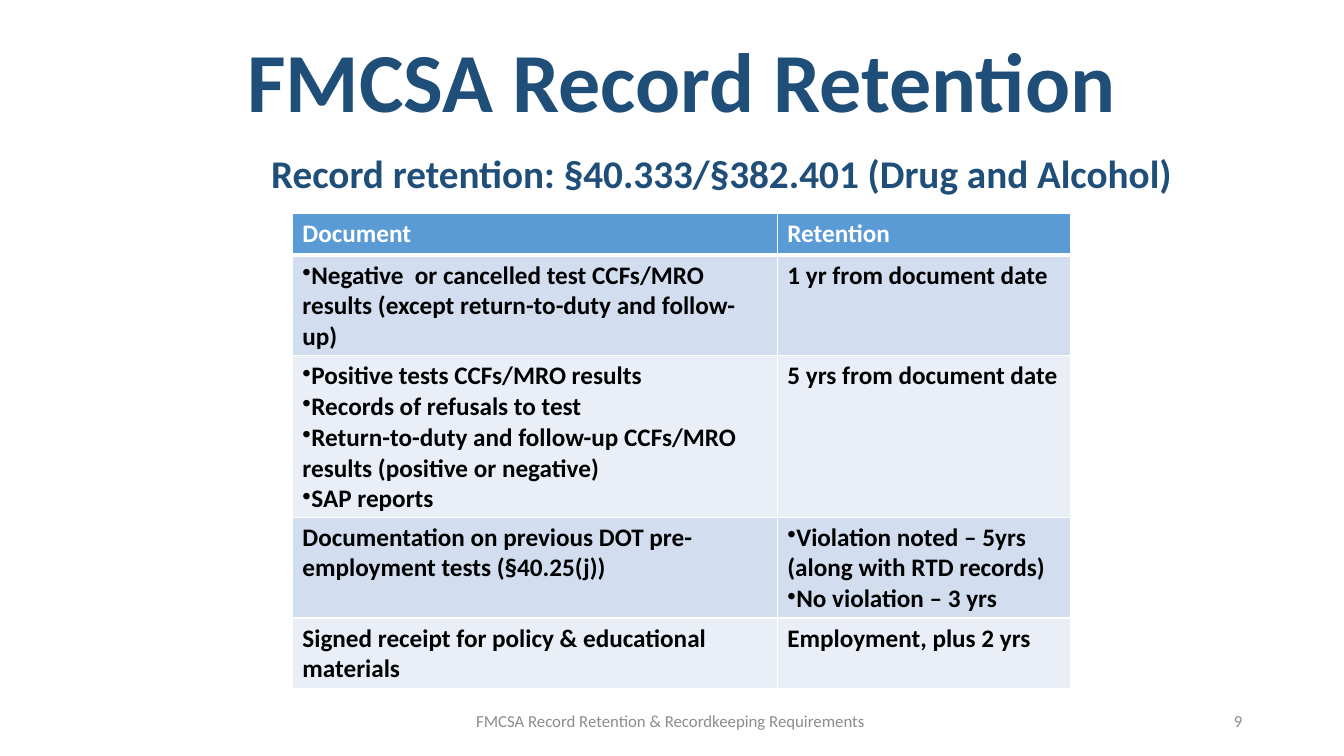
from lxml import etree
from pptx import Presentation
from pptx.dml.color import RGBColor
from pptx.enum.text import MSO_ANCHOR, PP_ALIGN
from pptx.oxml.ns import qn
from pptx.util import Inches, Pt

LEFT, CENTER, RIGHT = PP_ALIGN.LEFT, PP_ALIGN.CENTER, PP_ALIGN.RIGHT
TOP, MIDDLE, BOTTOM = MSO_ANCHOR.TOP, MSO_ANCHOR.MIDDLE, MSO_ANCHOR.BOTTOM
FONT = "Calibri"
BULLET = "•"
COLORS = {
    "navy": "1F4E79", "gray": "8C8C8C", "white": "FFFFFF", "black": "000000",
    "header": "5B9BD5", "band_dark": "D2DEEF", "band_light": "EAEFF7",
}

deck = Presentation()
deck.slide_width, deck.slide_height = Inches(13.33), Inches(7.5)
page = deck.slides.add_slide(deck.slide_layouts[6])


def add_span(para, text, size, color, bold):
    span = para.add_run()
    span.text = text
    span.font.name = FONT
    span.font.size = Pt(size)
    span.font.bold = bold
    span.font.color.rgb = RGBColor.from_string(COLORS[color])


def add_border(cell, side, width):
    line = etree.SubElement(cell._tc.get_or_add_tcPr(), qn(f"a:ln{side}"), w=str(Pt(width)))
    fill = etree.SubElement(line, qn("a:solidFill"))
    etree.SubElement(fill, qn("a:srgbClr"), val=COLORS["white"])


# Title, subtitle, footer and page number
captions = [
    ("FMCSA Record Retention", (1.76, 0.19, 10, 1.16), 60, "navy", True, CENTER, BOTTOM),
    ("Record retention: §40.333/§382.401 (Drug and Alcohol)",
     (2.59, 1.43, 9.59, 1.04), 28, "navy", True, LEFT, TOP),
    ("FMCSA Record Retention & Recordkeeping Requirements ",
     (4.42, 6.95, 4.5, 0.4), 12, "gray", False, CENTER, MIDDLE),
    ("9", (9.42, 6.95, 3, 0.4), 12, "gray", False, RIGHT, MIDDLE),
]
for text, place, size, color, bold, align, anchor in captions:
    box = page.shapes.add_textbox(*[Inches(length) for length in place])
    frame = box.text_frame
    frame.word_wrap = True
    frame.vertical_anchor = anchor
    para = frame.paragraphs[0]
    para.alignment = align
    if anchor == BOTTOM:
        para.line_spacing = 0.9
    add_span(para, text, size, color, bold)

# Retention table: each cell lists its paragraphs
rows = [
    (["Document"], ["Retention"]),
    (["•Negative  or cancelled test CCFs/MRO results (except return-to-duty and follow-up)"],
     ["1 yr from document date"]),
    (["•Positive tests CCFs/MRO results",
      "•Records of refusals to test",
      "•Return-to-duty and follow-up CCFs/MRO results (positive or negative)",
      "•SAP reports"],
     ["5 yrs from document date"]),
    (["Documentation on previous DOT pre-employment tests (§40.25(j))"],
     ["•Violation noted – 5yrs (along with RTD records)", "•No violation – 3 yrs"]),
    (["Signed receipt for policy & educational materials"],
     ["Employment, plus 2 yrs"]),
]
column_widths = [4.81, 2.91]
row_heights = [0.41, 1, 1.6, 1, 0.7]

table = page.shapes.add_table(
    len(rows), len(column_widths), Inches(2.9), Inches(2.12),
    Inches(sum(column_widths)), Inches(sum(row_heights))).table
table.horz_banding = False
for column, width in zip(table.columns, column_widths):
    column.width = Inches(width)

for row_number, (texts, height) in enumerate(zip(rows, row_heights)):
    table.rows[row_number].height = Inches(height)
    is_header = row_number == 0
    band = "header" if is_header else ("band_light", "band_dark")[row_number % 2]
    for column_number, lines in enumerate(texts):
        cell = table.cell(row_number, column_number)
        # Borders come before the fill in the cell properties
        for side in "LRTB":
            thick = (is_header and side == "B") or (row_number == 1 and side == "T")
            add_border(cell, side, 3 if thick else 1)
        cell.fill.solid()
        cell.fill.fore_color.rgb = RGBColor.from_string(COLORS[band])
        frame = cell.text_frame
        for line_number, line in enumerate(lines):
            para = frame.add_paragraph() if line_number else frame.paragraphs[0]
            if line.startswith(BULLET):
                etree.SubElement(para._p.get_or_add_pPr(), qn("a:buChar"), char=BULLET)
            add_span(para, line.lstrip(BULLET), 18, "white" if is_header else "black", True)

deck.save("out.pptx")
